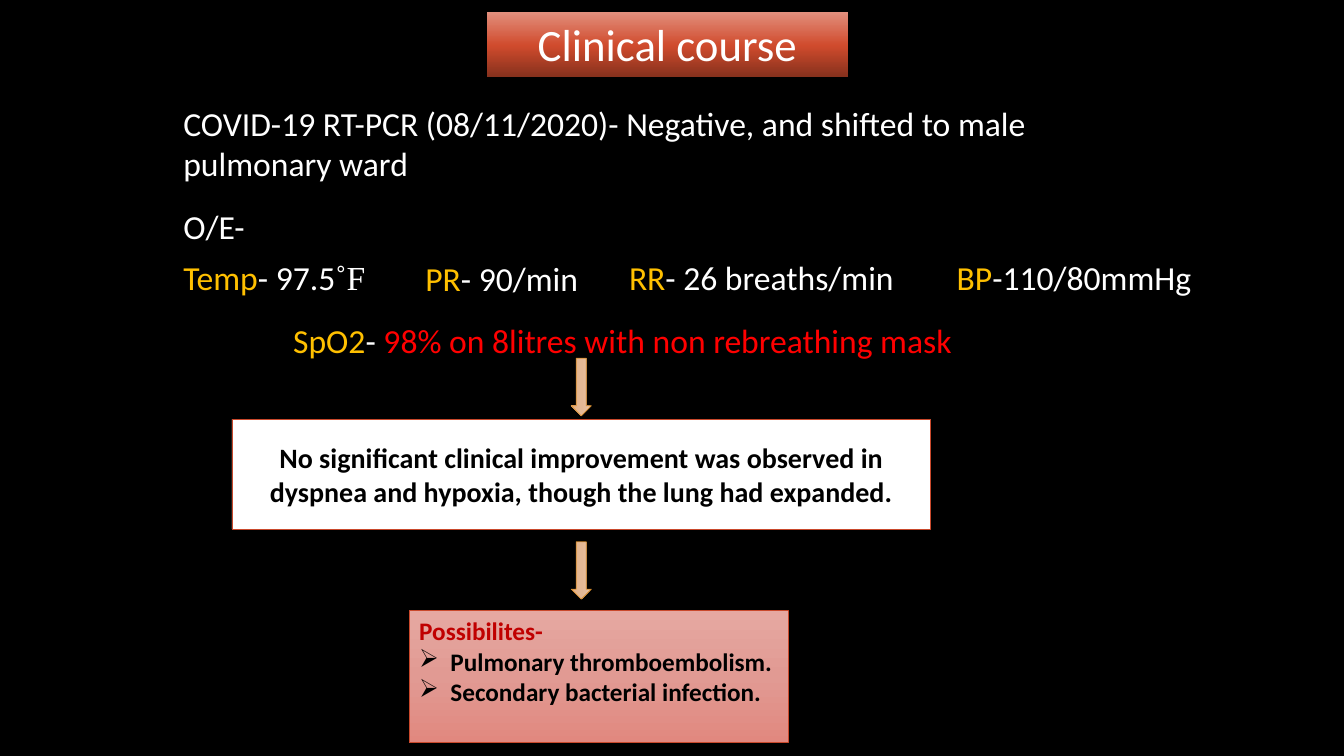
from copy import deepcopy

from lxml import etree
from pptx import Presentation
from pptx.dml.color import RGBColor
from pptx.enum.shapes import MSO_SHAPE
from pptx.enum.text import MSO_ANCHOR, MSO_AUTO_SIZE, PP_ALIGN
from pptx.oxml.ns import qn
from pptx.util import Inches, Pt

RECT, ARROW = MSO_SHAPE.RECTANGLE, MSO_SHAPE.RIGHT_ARROW
TOP, MIDDLE = MSO_ANCHOR.TOP, MSO_ANCHOR.MIDDLE
LEFT, CENTER = PP_ALIGN.LEFT, PP_ALIGN.CENTER
GROW = MSO_AUTO_SIZE.SHAPE_TO_FIT_TEXT
BLACK, WHITE, AMBER, RED, DARK_RED = "000000", "FFFFFF", "FFC000", "FF0000", "C00000"
RUST, ORANGE = "C9492C", "D58C2E"
TITLE_STOPS = [(0, "87311D"), (0.48, "D04B2D"), (1, "E28F7D")]
ARROW_STOPS = [(0, "E9C2A3"), (0.5, "E4B895"), (1, "E5AE81")]
PINK_STOPS = [(0, "E6A8A1"), (0.5, "E19A93"), (1, "E1887F")]


def rgb(color):
    """Turn a hex string into a colour."""
    return RGBColor.from_string(color)


def add_runs(p, runs, size, bold=False, align=LEFT):
    """Write (text, colour[, font]) runs into a paragraph."""
    p.alignment = align
    p.font.size, p.font.bold, p.font.name = Pt(size), bold, "Calibri"
    for text, color, *font in runs:
        r = p.add_run()
        r.text = text
        r.font.color.rgb = rgb(color)
        if font:
            r.font.name = font[0]


def add_text(s, box, runs):
    """Add a one-paragraph text box."""
    tf = s.shapes.add_textbox(*map(Inches, box)).text_frame
    tf.word_wrap, tf.auto_size = True, GROW
    add_runs(tf.paragraphs[0], runs, 24)


def add_panel(s, kind, box, line=None, anchor=TOP):
    """Add a shadowless shape with an optional thin outline."""
    sp = s.shapes.add_shape(kind, *map(Inches, box))
    sp.shadow.inherit = False
    if line:
        sp.line.color.rgb, sp.line.width = rgb(line), Pt(0.5)
    else:
        sp.line.fill.background()
    sp.text_frame.word_wrap = True
    sp.text_frame.vertical_anchor = anchor
    return sp


def fill_gradient(sp, stops, angle):
    """Fill a shape with a linear gradient, angle counter-clockwise."""
    sp.fill.gradient()
    sp.fill.gradient_angle = angle
    gs_list = sp._element.spPr.find(".//" + qn("a:gsLst"))
    for _ in stops[len(gs_list):]:
        gs_list.append(deepcopy(gs_list[0]))
    for stop, (position, color) in zip(sp.fill.gradient_stops, stops):
        stop.position, stop.color.rgb = position, rgb(color)


def add_bullet(p, char, indent):
    """Give a paragraph a hanging bullet."""
    pPr = p._p.get_or_add_pPr()
    pPr.set("marL", str(Inches(indent)))
    pPr.set("indent", str(-Inches(indent)))
    bullet = etree.Element(qn("a:buChar"), char=char)
    pPr.insert(0, bullet)


def add_title(s, box):
    """Add the title banner."""
    sp = add_panel(s, RECT, box)
    fill_gradient(sp, TITLE_STOPS, 90)
    sp.text_frame.auto_size = GROW
    add_runs(sp.text_frame.paragraphs[0], [("Clinical course", WHITE)], 32, align=CENTER)


def add_findings(s, left, top):
    """Add the test result, the vital signs and the oxygen level."""
    add_text(s, (left, top, 9.33, 0.91), [
        ("COVID-19 RT-PCR (08/11/2020)- Negative, and shifted to male pulmonary ward", WHITE)])
    add_text(s, (left, top + 1.02, 0.83, 0.5), [("O/E-", WHITE)])
    vitals = [
        (0, 1.53, 3, "Temp", [("- 97.5", WHITE), ("˚F", WHITE, "Times New Roman")]),
        (2.4, 1.54, 1.93, "PR", [("- 90/min", WHITE)]),
        (4.42, 1.53, 3.22, "RR", [("- 26 breaths/min", WHITE)]),
        (7.67, 1.53, 2.78, "BP", [("-110/80mmHg", WHITE)]),
        (1.09, 2.15, 6.93, "SpO2", [
            ("- ", WHITE), ("98% on 8litres with non rebreathing mask", RED)]),
    ]
    for dx, dy, width, label, value in vitals:
        add_text(s, (left + dx, top + dy, width, 0.81), [(label, AMBER)] + value)


def add_outcome(s, box):
    """Add the white outcome panel."""
    sp = add_panel(s, RECT, box, RUST, MIDDLE)
    sp.fill.solid()
    sp.fill.fore_color.rgb = rgb(WHITE)
    add_runs(sp.text_frame.paragraphs[0], [
        ("No significant clinical improvement was observed in dyspnea and hypoxia, "
         "though the lung had expanded.", BLACK)], 20, True, CENTER)


def add_possibilities(s, box):
    """Add the pink panel with its bulleted list."""
    sp = add_panel(s, RECT, box, RUST)
    fill_gradient(sp, PINK_STOPS, 270)
    tf = sp.text_frame
    tf.auto_size = GROW
    add_runs(tf.paragraphs[0], [("Possibilites-", DARK_RED)], 18, True)
    for item in ("Pulmonary thromboembolism.", "Secondary bacterial infection."):
        p = tf.add_paragraph()
        add_runs(p, [(item, BLACK)], 18, True)
        add_bullet(p, "➢", 0.31)


def add_down_arrow(s, box):
    """Add a block arrow turned to point down."""
    sp = add_panel(s, ARROW, box, ORANGE)
    sp.rotation = 90
    fill_gradient(sp, ARROW_STOPS, 270)


def main():
    """Build and save the slide."""
    prs = Presentation()
    prs.slide_width, prs.slide_height = Inches(13.33), Inches(7.5)
    s = prs.slides.add_slide(prs.slide_layouts[6])
    s.background.fill.solid()
    s.background.fill.fore_color.rgb = rgb(BLACK)
    add_findings(s, 1.72, 0.97)
    add_title(s, (4.83, 0.12, 3.58, 0.64))
    add_outcome(s, (2.3, 4.16, 6.93, 1.09))
    add_possibilities(s, (4.06, 6.06, 3.76, 1.31))
    for top in (3.74, 5.56):
        add_down_arrow(s, (5.48, top, 0.57, 0.2))
    prs.save("out.pptx")


if __name__ == "__main__":
    main()
